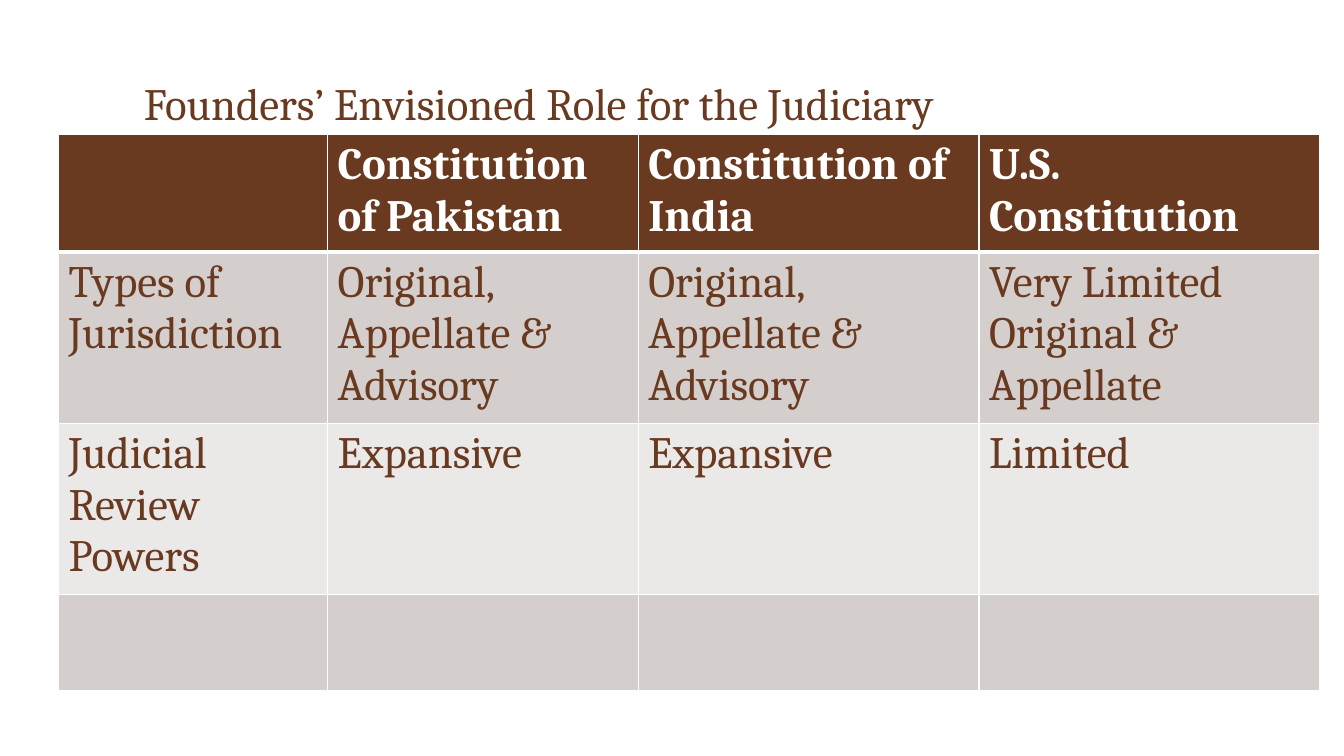
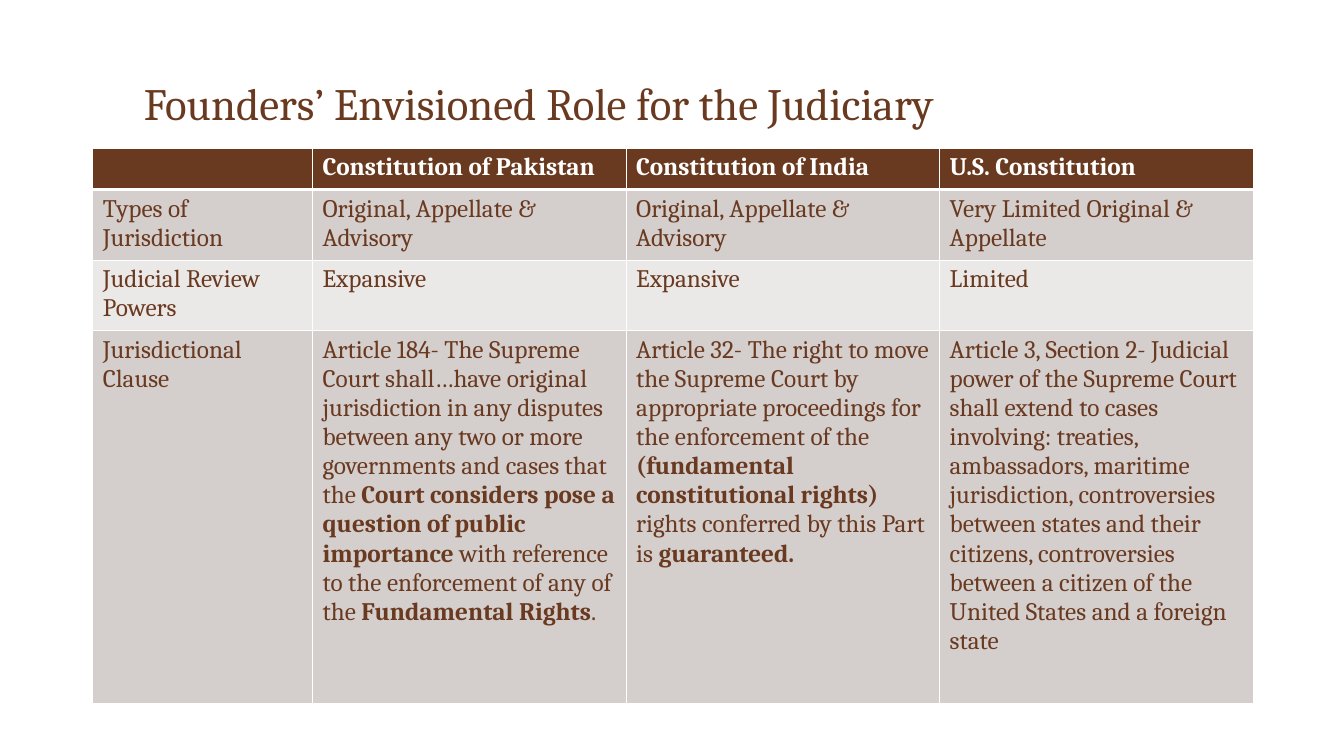
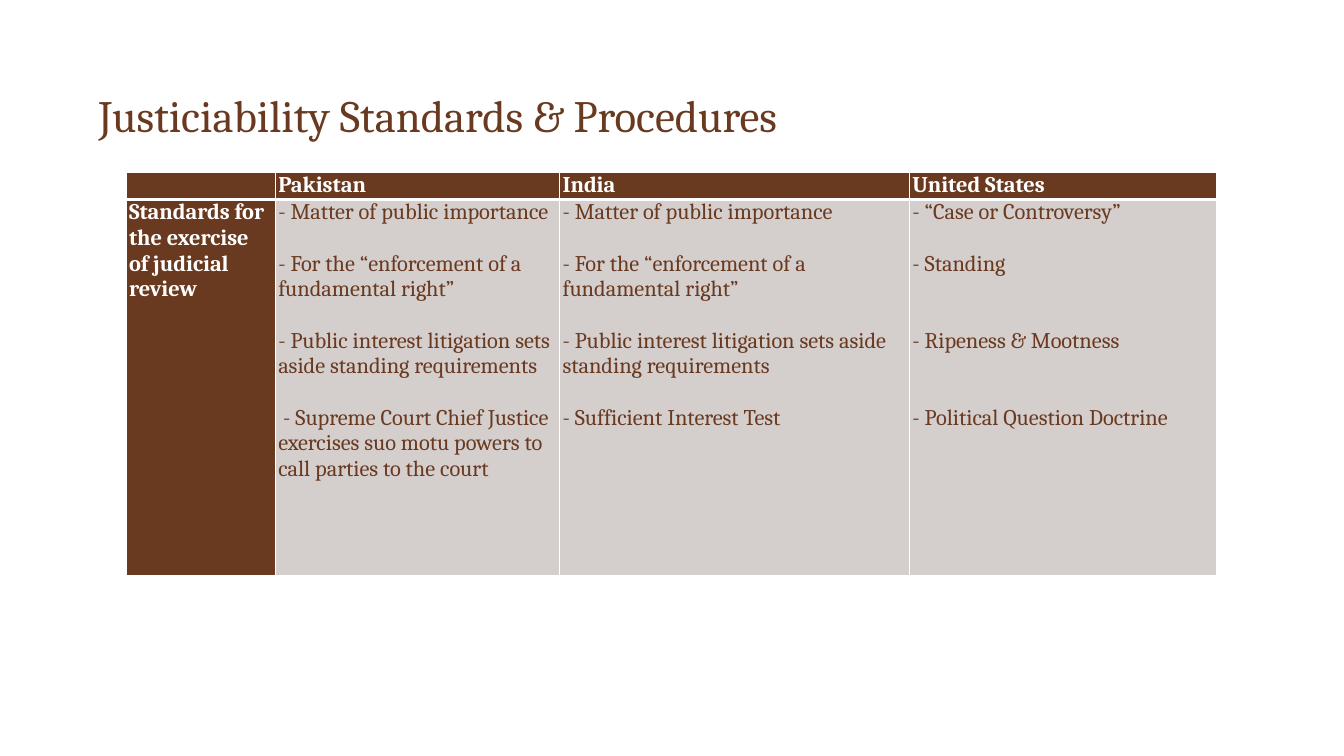
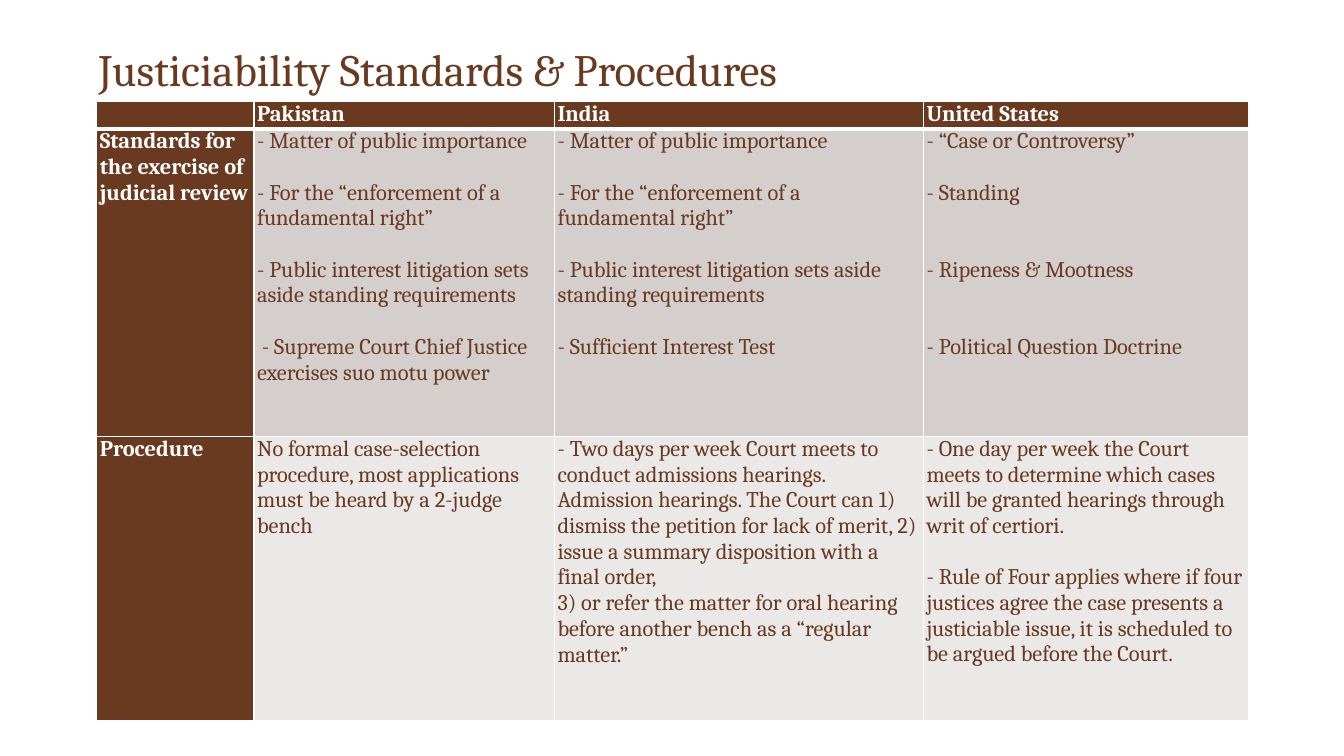
"""Build four slides comparing the judiciaries of Pakistan, India and the United States."""
from lxml.etree import SubElement
from pptx import Presentation
from pptx.dml.color import RGBColor
from pptx.enum.text import MSO_ANCHOR
from pptx.oxml.ns import qn
from pptx.util import Inches, Pt

BROWN = RGBColor(0x6A, 0x3A, 0x20)
WHITE = RGBColor(0xFF, 0xFF, 0xFF)
BANDS = (RGBColor(0xD4, 0xCE, 0xCD), RGBColor(0xEB, 0xE8, 0xE8))
FONT = "Cambria"
TITLE_SIZE = 32
LINE_PITCH = 1.146
THIN, THICK = 1, 3
ROOMY, TIGHT = (0.1, 0.05), (0.03, 0)

ROLE = "Founders’ Envisioned Role for the Judiciary"
JUSTICIABILITY = "Justiciability Standards & Procedures"

CONSTITUTIONS = ["", "Constitution of Pakistan", "Constitution of India", "U.S. Constitution"]
JURISDICTION = [
    "Types of Jurisdiction",
    "Original, Appellate & Advisory",
    "Original, Appellate & Advisory",
    [(0, "Very Limited Original &"), (0, "Appellate")],
]
REVIEW_POWERS = ["Judicial Review Powers", "Expansive", "Expansive", "Limited"]
CLAUSES = [
    "Jurisdictional Clause",
    "Article 184- The Supreme Court shall…have original jurisdiction in any disputes between "
    "any two or more governments and cases that the** Court considers pose a question of public "
    "importance** with reference to the enforcement of any of the **Fundamental Rights**.",
    "Article 32- The right to move the Supreme Court by appropriate proceedings for the "
    "enforcement of the **(fundamental constitutional rights)** rights conferred by this Part "
    "is **guaranteed.**",
    "Article 3, Section 2- Judicial power of the Supreme Court shall extend to cases involving: "
    "treaties, ambassadors, maritime jurisdiction, controversies between states and their "
    "citizens, controversies between a citizen of the United States and a foreign state",
]
COUNTRIES = ["", "Pakistan", "India", "United States"]
SHARED_STANDARDS = [
    (0, "- Matter of public importance"),
    (1, "- For the “enforcement of a fundamental right”"),
    (1, "- Public interest litigation sets aside standing requirements"),
]
US_STANDARDS = [
    (0, "- “Case or Controversy”"),
    (1, "- Standing"),
    (2, "- Ripeness & Mootness"),
    (2, "- Political Question Doctrine"),
]
PROCEDURE = [
    "Procedure",
    "No formal case-selection procedure, most applications must be heard by a 2-judge bench",
    [
        (0, "- Two days per week Court meets to conduct admissions hearings. Admission hearings. "
            "The Court can 1) dismiss the petition for lack of merit, 2) issue a summary "
            "disposition with a final order,"),
        (0, "3) or refer the matter for oral hearing before another bench as a “regular matter.”"),
    ],
    [
        (0, "- One day per week the Court meets to determine which cases will be granted hearings "
            "through writ of certiori."),
        (1, "- Rule of Four applies where if four justices agree the case presents a justiciable "
            "issue, it is scheduled to be argued before the Court."),
    ],
]


def standards(suo_motu):
    """Return the row of review standards, with Pakistan's last point given."""
    return [
        "Standards for the exercise of judicial review",
        SHARED_STANDARDS + [(1, " - Supreme Court Chief Justice exercises " + suo_motu)],
        SHARED_STANDARDS + [(1, "- Sufficient Interest Test")],
        US_STANDARDS,
    ]


def style(font, size, color, bold=False):
    """Apply the deck's typeface with a size, colour and weight."""
    font.name, font.size, font.bold = FONT, Pt(size), bold
    font.color.rgb = color


def add_title(slide, title, left, top, width, height):
    """Add a slide title resting on the bottom of its box."""
    frame = slide.shapes.add_textbox(*map(Inches, (left, top, width, height))).text_frame
    frame.word_wrap = True
    frame.vertical_anchor = MSO_ANCHOR.BOTTOM
    frame.text = title
    style(frame.paragraphs[0].runs[0].font, TITLE_SIZE, BROWN)


def set_borders(cell, top, bottom):
    """Draw white borders, with the top and bottom widths given in points."""
    properties = cell._tc.get_or_add_tcPr()
    for side, width in (("L", THIN), ("R", THIN), ("T", top), ("B", bottom)):
        line = SubElement(properties, qn(f"a:ln{side}"), w=str(Pt(width)))
        SubElement(SubElement(line, qn("a:solidFill")), qn("a:srgbClr"), val=str(WHITE))


def write_cell(cell, content, size, color, bold):
    """Write text, or (blank lines before, text) entries; ** switches bold."""
    entries = [(0, content)] if isinstance(content, str) else content
    frame = cell.text_frame
    for index, (gap, text) in enumerate(entries):
        paragraph = frame.add_paragraph() if index else frame.paragraphs[0]
        if gap:
            paragraph.space_before = Pt(round(gap * size * LINE_PITCH, 1))
        for part, words in enumerate(text.split("**")):
            if words:
                run = paragraph.add_run()
                run.text = words
                style(run.font, size, color, bold or part % 2 == 1)
        if not text:
            SubElement(paragraph._p, qn("a:endParaRPr"), sz=str(size * 100))


def add_comparison(slide, left, top, columns, heights, rows, size, margins, row_heads=False):
    """Add a banded comparison table with a brown header row."""
    box = map(Inches, (left, top, sum(columns), sum(heights)))
    table = slide.shapes.add_table(len(rows), len(columns), *box).table
    table.first_row = table.horz_banding = False
    for column, width in zip(table.columns, columns):
        column.width = Inches(width)
    for r, (row, height, contents) in enumerate(zip(table.rows, heights, rows)):
        row.height = Inches(height)
        for c, (cell, content) in enumerate(zip(row.cells, contents)):
            head = r == 0 or (row_heads and c == 0)
            cell.margin_left = cell.margin_right = Inches(margins[0])
            cell.margin_top = cell.margin_bottom = Inches(margins[1])
            set_borders(cell, THICK if r == 1 else THIN, THICK if r == 0 else THIN)
            cell.fill.solid()
            cell.fill.fore_color.rgb = BROWN if head else BANDS[(r - 1) % 2]
            write_cell(cell, content, size, WHITE if head else BROWN, head)


def main():
    """Build and save the deck."""
    deck = Presentation()
    deck.slide_width, deck.slide_height = Inches(13.33), Inches(7.5)
    blank = deck.slide_layouts[6]
    role, clauses, review, procedure = (deck.slides.add_slide(blank) for _ in range(4))

    for slide in (role, clauses):
        add_title(slide, ROLE, 1.33, 0.47, 10.66, 0.86)
    for slide, height in ((review, 1.45), (procedure, 1)):
        add_title(slide, JUSTICIABILITY, 0.88, 0, 11.5, height)

    overview = [CONSTITUTIONS, JURISDICTION, REVIEW_POWERS]
    add_comparison(role, 0.58, 1.33, [2.67, 3.08, 3.38, 3.38], [1.11, 1.64, 1.64, 0.95],
                   overview + [[""] * 4], 32, ROOMY)
    add_comparison(clauses, 0.92, 1.47, [2.18] + [3.11] * 3, [0.41, 0.7, 0.7, 3.7],
                   overview + [CLAUSES], 18, ROOMY)
    add_comparison(review, 1.25, 1.71, [1.48, 2.82, 3.47, 3.05], [0.27, 3.73],
                   [COUNTRIES, standards("suo motu powers to call parties to the court")],
                   16, TIGHT, row_heads=True)
    add_comparison(procedure, 0.96, 1.01, [1.56, 2.98, 3.66, 3.22], [0.25, 3.05, 2.82],
                   [COUNTRIES, standards("suo motu power"), PROCEDURE],
                   16, TIGHT, row_heads=True)
    deck.save("out.pptx")


if __name__ == "__main__":
    main()
